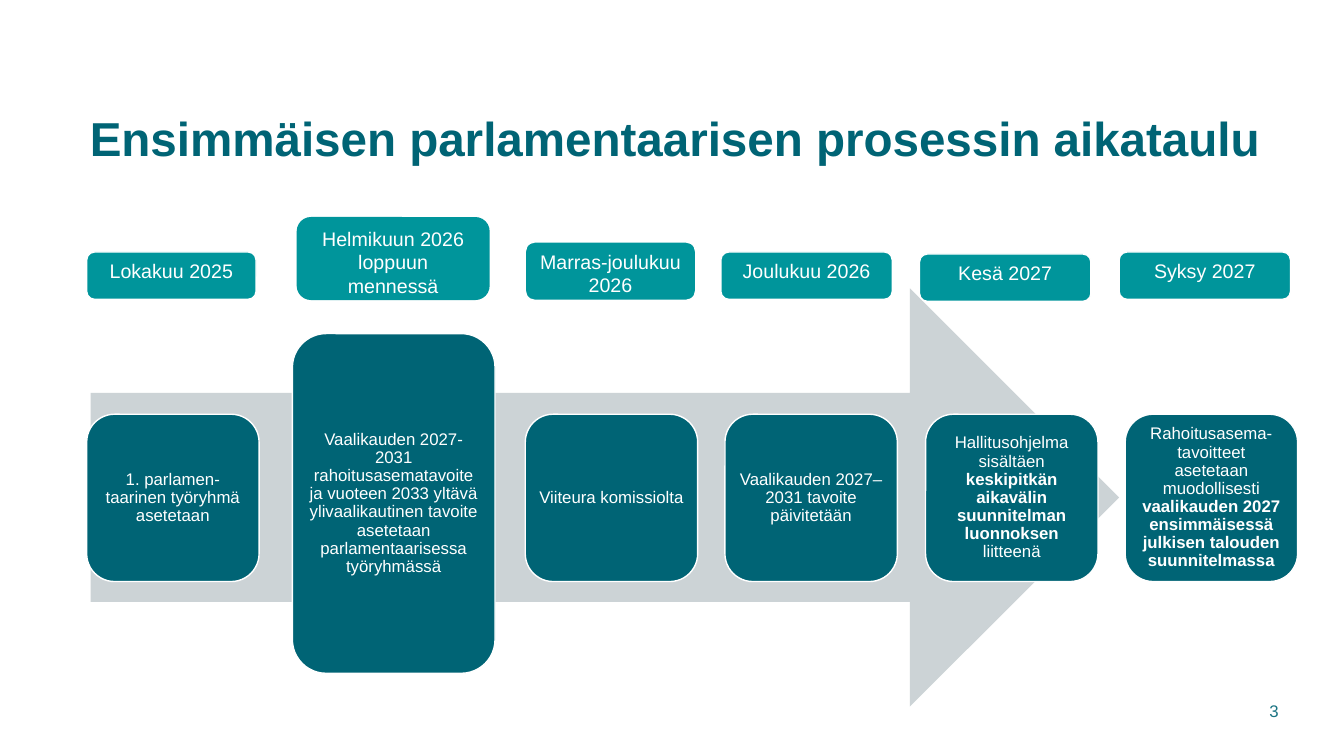
"""Build the timeline slide of the first parliamentary process."""
from dataclasses import dataclass

from pptx import Presentation
from pptx.dml.color import RGBColor
from pptx.enum.shapes import MSO_SHAPE
from pptx.enum.text import MSO_ANCHOR, PP_ALIGN
from pptx.util import Inches, Pt

ARROW, ROUNDED = MSO_SHAPE.RIGHT_ARROW, MSO_SHAPE.ROUNDED_RECTANGLE
TOP, MIDDLE = MSO_ANCHOR.TOP, MSO_ANCHOR.MIDDLE
LEFT, CENTER, RIGHT = PP_ALIGN.LEFT, PP_ALIGN.CENTER, PP_ALIGN.RIGHT
COLORS = {"dark": "006475", "teal": "00959B", "arrow": "CCD3D6",
          "white": "FFFFFF", "number": "1A7483"}


@dataclass(frozen=True)
class Box:
    left: float
    top: float
    width: float
    height: float


@dataclass(frozen=True)
class Step:
    date: str
    date_box: Box
    text: tuple[str, ...]
    box: Box
    date_line: str = "white"


def step_box(left: float) -> Box:
    return Box(left, 4.11, 1.71, 1.66)


STEPS = (
    Step("Lokakuu 2025", Box(0.86, 2.5, 1.68, 0.47),
         ("1. parlamen- taarinen työryhmä asetetaan",), step_box(0.86)),
    Step("Helmikuun 2026 loppuun mennessä", Box(2.95, 2.16, 1.9, 0.81),
         ("Vaalikauden 2027-2031 rahoitusasematavoite ja vuoteen 2033 yltävä "
          "ylivaalikautinen tavoite asetetaan parlamentaarisessa työryhmässä",),
         Box(2.9, 3.31, 2.01, 3.37), "teal"),
    Step("Marras-joulukuu 2026", Box(5.21, 2.4, 1.69, 0.58),
         ("Viiteura komissiolta",), step_box(5.21)),
    Step("Joulukuu 2026", Box(7.15, 2.5, 1.7, 0.47),
         ("Vaalikauden 2027–2031 tavoite päivitetään",), step_box(7.19)),
    Step("Kesä 2027", Box(9.12, 2.52, 1.7, 0.47),
         ("Hallitusohjelma sisältäen ",
          "keskipitkän aikavälin suunnitelman luonnoksen", " liitteenä"),
         step_box(9.18)),
    Step("Syksy 2027", Box(11.1, 2.5, 1.7, 0.47),
         ("Rahoitusasema-tavoitteet asetetaan muodollisesti ",
          "vaalikauden 2027 ensimmäisessä julkisen talouden suunnitelmassa"),
         step_box(11.16)),
)


def rgb(name: str) -> RGBColor:
    return RGBColor.from_string(COLORS[name])


def place(box: Box) -> tuple:
    return tuple(Inches(v) for v in (box.left, box.top, box.width, box.height))


def add_shape(s, kind, box: Box, fill: str, line: str | None = None):
    sp = s.shapes.add_shape(kind, *place(box))
    sp.shadow.inherit = False
    sp.fill.solid()
    sp.fill.fore_color.rgb = rgb(fill)
    if line:
        sp.line.color.rgb = rgb(line)
        sp.line.width = Pt(1)
    else:
        sp.line.fill.background()
    return sp


def write(sp, parts: tuple[str, ...], size: int, color: str, align, anchor,
          side: float = 0.1, spacing: float = 1.0, bold: bool = False) -> None:
    """Write one paragraph whose every second part is bold."""
    tf = sp.text_frame
    tf.word_wrap = True
    tf.vertical_anchor = anchor
    tf.margin_left = tf.margin_right = Inches(side)
    tf.margin_top = tf.margin_bottom = Inches(0.05)
    p = tf.paragraphs[0]
    p.alignment = align
    p.line_spacing = spacing
    p.font.name = "Arial"
    p.font.size = Pt(size)
    p.font.bold = bold
    p.font.color.rgb = rgb(color)
    for i, part in enumerate(parts):
        r = p.add_run()
        r.text = part
        if i % 2:
            r.font.bold = True


def main() -> None:
    prs = Presentation()
    prs.slide_width, prs.slide_height = Inches(13.33), Inches(7.5)
    s = prs.slides.add_slide(prs.slide_layouts[6])

    add_shape(s, ARROW, Box(0.9, 2.86, 10.2, 4.15), "arrow")
    title = s.shapes.add_textbox(*place(Box(0.89, 0.8, 11.71, 1.18)))
    write(title, ("Ensimmäisen parlamentaarisen prosessin aikataulu",), 34,
          "dark", LEFT, MIDDLE, side=0, spacing=0.95, bold=True)

    for step in STEPS:
        label = add_shape(s, ROUNDED, step.date_box, "teal", step.date_line)
        write(label, (step.date,), 14, "white", CENTER, TOP)
        card = add_shape(s, ROUNDED, step.box, "dark", "white")
        write(card, step.text, 12, "white", CENTER, MIDDLE,
              side=0.05, spacing=0.9)

    number = s.shapes.add_textbox(*place(Box(11.57, 6.85, 1.21, 0.4)))
    write(number, ("3",), 12, "number", RIGHT, MIDDLE)
    prs.save("out.pptx")


if __name__ == "__main__":
    main()
